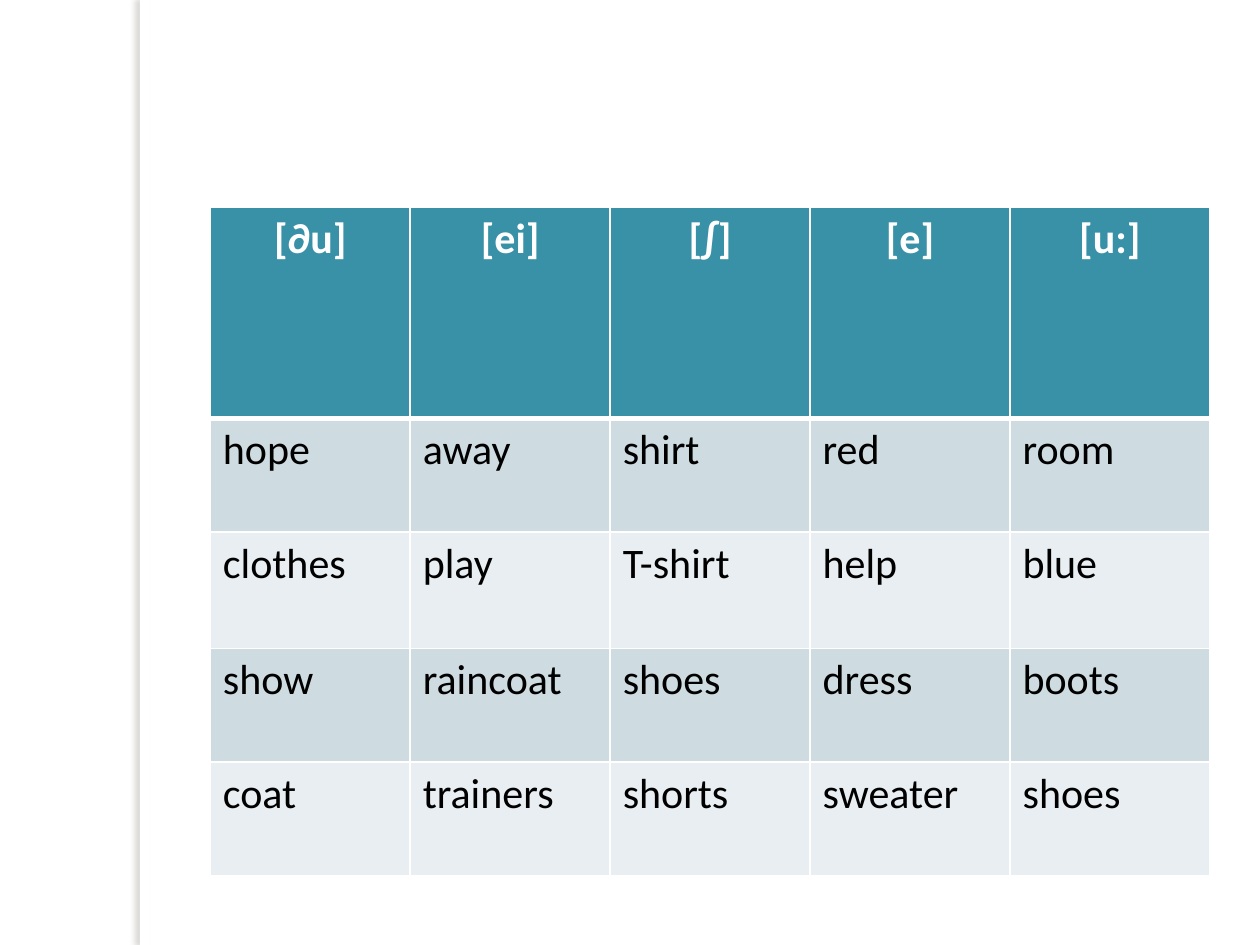
from lxml.etree import SubElement
from pptx import Presentation
from pptx.dml.color import RGBColor
from pptx.enum.shapes import MSO_SHAPE
from pptx.enum.text import PP_ALIGN
from pptx.oxml import parse_xml
from pptx.oxml.ns import nsdecls, qn
from pptx.util import Cm, Pt

WHITE = RGBColor(0xFF, 0xFF, 0xFF)
BLACK = RGBColor(0x00, 0x00, 0x00)
TEAL = RGBColor(0x38, 0x91, 0xA7)
MIST = RGBColor(0xCE, 0xDC, 0xE1)
PALE = RGBColor(0xE8, 0xEE, 0xF1)
SHADE = RGBColor(0x73, 0x6F, 0x63)

WORDS = [
    ["[∂u]", "[ei]", "[∫]", "[e]", "[u:]"],
    ["hope", "away", "shirt", "red", "room"],
    ["clothes", "play", "T-shirt", "help", "blue"],
    ["show", "raincoat", "shoes", "dress", "boots"],
    ["coat", "trainers", "shorts", "sweater", "shoes"],
]
HEIGHTS = [4.27, 2.29, 2.34, 2.29, 2.29]
WIDTH = 4.03


def put_text(frame, text, size=24, color=BLACK, bold=False, align=PP_ALIGN.LEFT):
    para = frame.paragraphs[0]
    para.alignment = align
    run = para.add_run()
    run.text = text
    run.font.name = "Calibri"
    run.font.size = Pt(size)
    run.font.bold = bold
    run.font.color.rgb = color


def add_edges(cell, top, base):
    props = cell._tc.get_or_add_tcPr()
    edges = {"lnL": 1, "lnR": 1, "lnT": top, "lnB": base}
    for spot, (tag, width) in enumerate(edges.items()):
        line = parse_xml(
            f'<a:{tag} {nsdecls("a")} w="{Pt(width)}"><a:solidFill>'
            f'<a:srgbClr val="{WHITE}"/></a:solidFill></a:{tag}>'
        )
        props.insert(spot, line)


def add_bar(slide):
    bar = slide.shapes.add_shape(MSO_SHAPE.RECTANGLE, Cm(2.82), 0, Cm(0.2), Cm(19.05))
    bar.fill.solid()
    bar.fill.fore_color.rgb = WHITE
    bar.line.fill.background()
    bar.shadow.inherit = False
    effects = bar._element.spPr.find(qn("a:effectLst"))
    shadow = SubElement(
        effects, qn("a:outerShdw"), blurRad=str(Pt(3)), dist=str(Pt(3)),
        dir="10800000", algn="tl", rotWithShape="0",
    )
    color = SubElement(shadow, qn("a:srgbClr"), val=str(SHADE))
    SubElement(color, qn("a:alpha"), val="25000")


def add_grid(slide):
    rows, cols = len(WORDS), len(WORDS[0])
    frame = slide.shapes.add_table(
        rows, cols, Cm(4.24), Cm(4.17), Cm(WIDTH * cols), Cm(sum(HEIGHTS))
    )
    table = frame.table
    for col in table.columns:
        col.width = Cm(WIDTH)
    for i, words in enumerate(WORDS):
        table.rows[i].height = Cm(HEIGHTS[i])
        head = i == 0
        fill = TEAL if head else MIST if i % 2 else PALE
        style = dict(color=WHITE, bold=True, align=PP_ALIGN.CENTER) if head else {}
        for j, word in enumerate(words):
            cell = table.cell(i, j)
            cell.fill.solid()
            cell.fill.fore_color.rgb = fill
            put_text(cell.text_frame, word, **style)
            add_edges(cell, top=3 if i == 1 else 1, base=3 if head else 1)


def main():
    deck = Presentation()
    deck.slide_width, deck.slide_height = Cm(25.4), Cm(19.05)
    slide = deck.slides.add_slide(deck.slide_layouts[6])
    add_bar(slide)
    add_grid(slide)
    deck.save("out.pptx")


if __name__ == "__main__":
    main()
